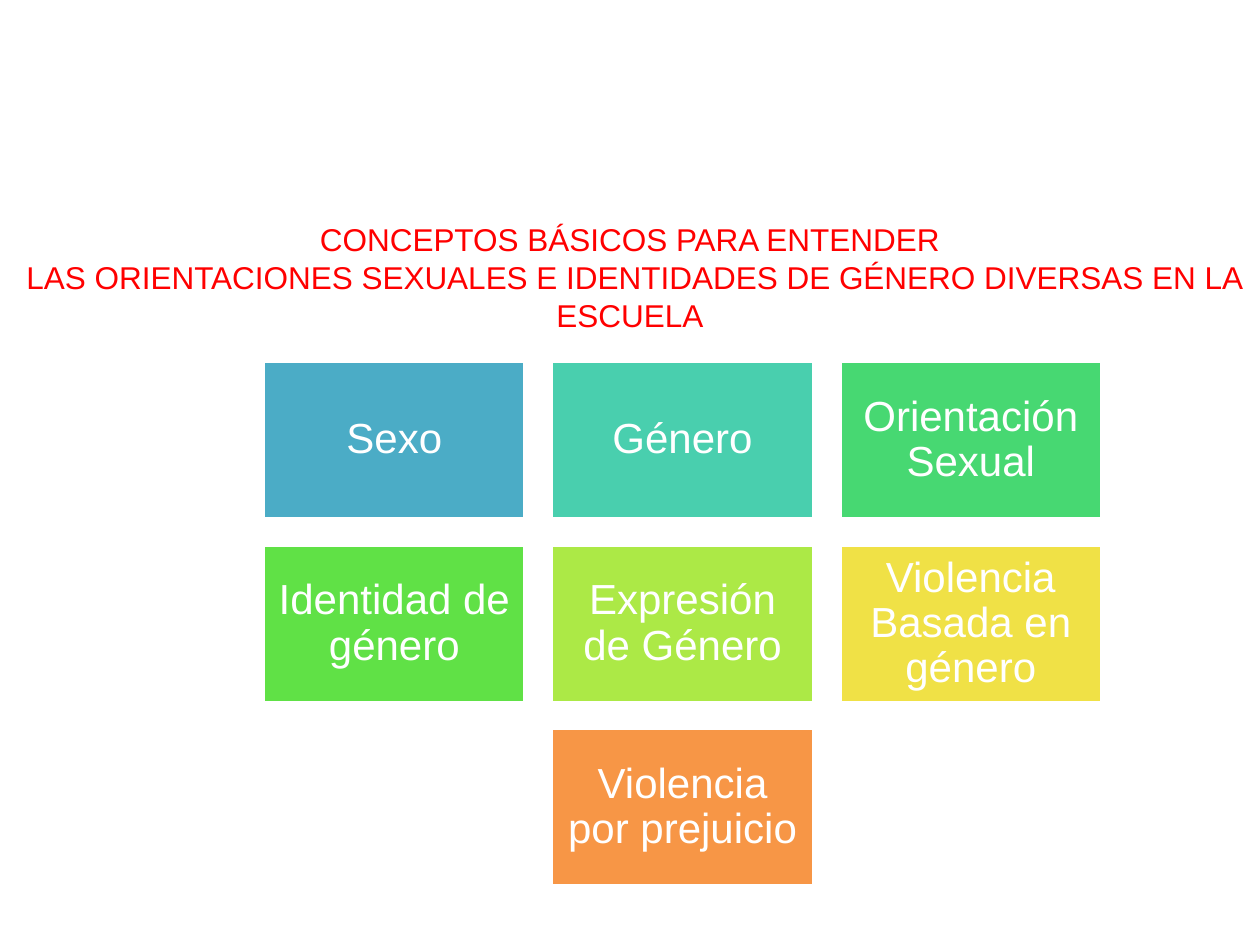
from pptx import Presentation, util as u
from pptx.dml.color import RGBColor
from pptx.enum import shapes, text

TITLE = [
    "CONCEPTOS BÁSICOS PARA ENTENDER",
    " LAS ORIENTACIONES SEXUALES E IDENTIDADES DE GÉNERO DIVERSAS EN LA ESCUELA",
]
CONCEPT_ROWS = [
    [("Sexo", "4BACC6"), ("Género", "49CFAE"), ("Orientación Sexual", "47D872")],
    [("Identidad de género", "60E146"), ("Expresión de Género", "ACE946"),
     ("Violencia Basada en género", "F0E146")],
    [("Violencia por prejuicio", "F79646")],
]

# Lengths in centimetres
SLIDE_WIDTH, SLIDE_HEIGHT = 25.4, 19.05
TITLE_TOP, TITLE_HEIGHT = 4.32, 2.57
GRID_LEFT, GRID_TOP = 5.31, 7.29
BOX_WIDTH, BOX_HEIGHT = 5.28, 3.17
GAP = 0.53
COLUMNS = 3


def color(hex_code):
    return RGBColor.from_string(hex_code)


def write(shape, lines, size, hex_code, spacing=1.0,
          anchor=text.MSO_ANCHOR.TOP, margin=None):
    frame = shape.text_frame
    frame.word_wrap = True
    frame.vertical_anchor = anchor
    if margin is not None:
        frame.margin_left = frame.margin_right = u.Cm(margin)
        frame.margin_top = frame.margin_bottom = u.Cm(margin)
    for index, line in enumerate(lines):
        paragraph = frame.add_paragraph() if index else frame.paragraphs[0]
        paragraph.alignment = text.PP_ALIGN.CENTER
        paragraph.line_spacing = spacing
        run = paragraph.add_run()
        run.text = line
        run.font.name = "Arial"
        run.font.size = u.Pt(size)
        run.font.color.rgb = color(hex_code)


def add_concept(slide, label, fill, left, top):
    box = slide.shapes.add_shape(
        shapes.MSO_SHAPE.RECTANGLE,
        u.Cm(left), u.Cm(top), u.Cm(BOX_WIDTH), u.Cm(BOX_HEIGHT))
    box.shadow.inherit = False
    box.fill.solid()
    box.fill.fore_color.rgb = color(fill)
    box.line.color.rgb = color("FFFFFF")
    box.line.width = u.Pt(2)
    write(box, [label], 24, "FFFFFF", spacing=0.9,
          anchor=text.MSO_ANCHOR.MIDDLE, margin=0.25)


def main():
    presentation = Presentation()
    presentation.slide_width = u.Cm(SLIDE_WIDTH)
    presentation.slide_height = u.Cm(SLIDE_HEIGHT)
    slide = presentation.slides.add_slide(presentation.slide_layouts[6])

    title = slide.shapes.add_textbox(
        0, u.Cm(TITLE_TOP), u.Cm(SLIDE_WIDTH), u.Cm(TITLE_HEIGHT))
    write(title, TITLE, 18, "FF0000")

    for row_index, row in enumerate(CONCEPT_ROWS):
        top = GRID_TOP + row_index * (BOX_HEIGHT + GAP)
        first_column = (COLUMNS - len(row)) / 2  # centres a short row
        for index, (label, fill) in enumerate(row):
            left = GRID_LEFT + (first_column + index) * (BOX_WIDTH + GAP)
            add_concept(slide, label, fill, left, top)

    presentation.save("out.pptx")


if __name__ == "__main__":
    main()
